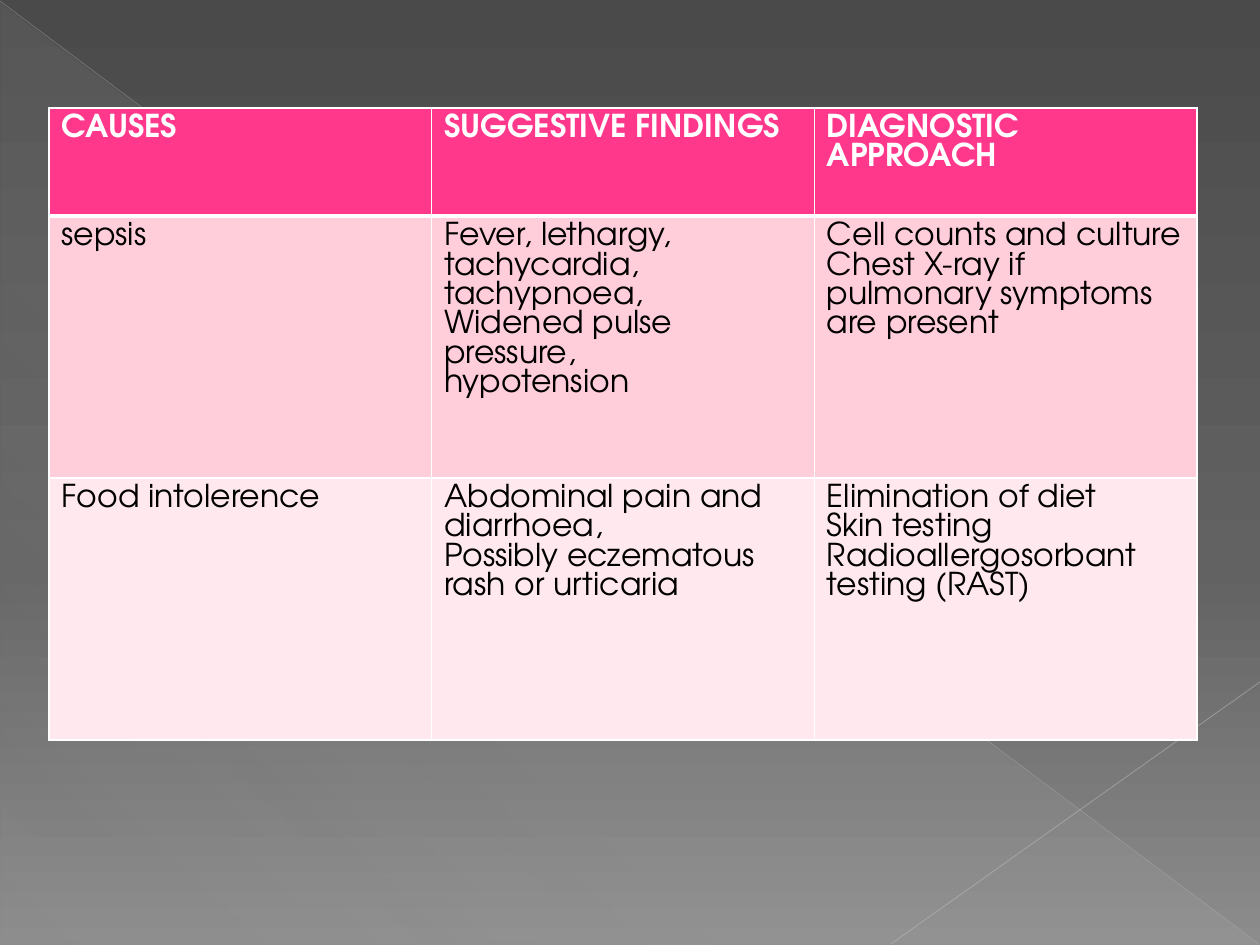
from lxml.etree import SubElement
from pptx import Presentation
from pptx.dml.color import RGBColor
from pptx.enum.shapes import MSO_CONNECTOR, MSO_SHAPE
from pptx.oxml import parse_xml
from pptx.oxml.ns import nsdecls, qn
from pptx.util import Emu, Pt

PX = 914400 / 126
FONT = "TeX Gyre Adventor"
WHITE = RGBColor(0xFF, 0xFF, 0xFF)
BLACK = RGBColor(0x00, 0x00, 0x00)
PINK = RGBColor(0xFF, 0x38, 0x8C)
ROSE = RGBColor(0xFF, 0xCE, 0xDA)
BLUSH = RGBColor(0xFF, 0xE8, 0xEE)
CHARCOAL = RGBColor(0x4A, 0x4A, 0x4A)
SLATE = RGBColor(0x62, 0x62, 0x62)
ASH = RGBColor(0x8C, 0x8C, 0x8C)
MIST = RGBColor(0xD2, 0xD2, 0xD2)
SILVER = RGBColor(0xBF, 0xBF, 0xBF)
PEARL = RGBColor(0xC6, 0xC6, 0xC6)

HEADER_FORMAT = {"name": FONT, "size": Pt(18), "bold": True}
BODY_FORMAT = {**HEADER_FORMAT, "bold": False}
ROWS = [
    (108, PINK, WHITE, HEADER_FORMAT,
     ["CAUSES", "SUGGESTIVE FINDINGS", "DIAGNOSTIC APPROACH"]),
    (262, ROSE, BLACK, BODY_FORMAT,
     ["sepsis",
      "Fever, lethargy, tachycardia, tachypnoea,\nWidened pulse pressure,\nhypotension",
      "Cell counts and culture\nChest X-ray if pulmonary symptoms are present"]),
    (262, BLUSH, BLACK, BODY_FORMAT,
     ["Food intolerence",
      "Abdominal pain and diarrhoea,\nPossibly eczematous rash or urticaria",
      "Elimination of diet\nSkin testing\nRadioallergosorbant testing (RAST)"]),
]


def px(length):
    """Turn px into EMU."""
    return Emu(round(length * PX))


def set_alpha(color_element, percent):
    """Make a colour element partly transparent."""
    SubElement(color_element, qn("a:alpha"), val=str(percent * 1000))


def apply_gradient(fill, element, angle, stops):
    """Give a fill a linear gradient of (position, colour, opacity) stops."""
    fill.gradient()
    fill.gradient_angle = 360 - angle
    stop_list = next(element.iter(qn("a:gsLst")))
    stop_list.clear()
    for position, color, opacity in stops:
        stop = SubElement(stop_list, qn("a:gs"), pos=str(position * 1000))
        set_alpha(SubElement(stop, qn("a:srgbClr"), val=str(color)), opacity)


def add_ray(slide, start, end, color, width, opacity):
    """Draw one thin translucent line."""
    ray = slide.shapes.add_connector(
        MSO_CONNECTOR.STRAIGHT, *(px(v) for v in (*start, *end)))
    ray.line.color.rgb = color
    ray.line.width = Pt(width)
    set_alpha(next(ray.element.iter(qn("a:srgbClr"))), opacity)
    SubElement(ray.element.spPr, qn("a:effectLst"))


def add_backdrop(slide, left, top, width, height):
    """Fill the background and lay the triangle and rays over the box."""
    apply_gradient(slide.background.fill, slide.element, 90,
                   [(0, CHARCOAL, 100), (60, SLATE, 100), (100, ASH, 100)])
    triangle = slide.shapes.add_shape(
        MSO_SHAPE.RIGHT_TRIANGLE,
        px(left + 1), px(top + 3), px(width - 2), px(height - 3))
    triangle.shadow.inherit = False
    triangle.line.fill.background()
    apply_gradient(triangle.fill, triangle.element, 133,
                   [(0, MIST, 10), (70, MIST, 8), (100, MIST, 1)])
    right, bottom = left + width - 1, top + height - 1
    add_ray(slide, (left, top + 1), (right, bottom), SILVER, 0.39, 35)
    add_ray(slide, (left + width, top + 682), (left + 891, bottom), PEARL, 0.47, 45)


def set_borders(cell, widths):
    """Draw white cell borders of the given widths by side."""
    properties = cell._tc.get_or_add_tcPr()
    for index, (side, width) in enumerate(widths.items()):
        properties.insert(index, parse_xml(
            f'<a:ln{side} {nsdecls("a")} w="{Pt(width)}"><a:solidFill>'
            f'<a:srgbClr val="{WHITE}"/></a:solidFill></a:ln{side}>'))


def fill_cell(cell, wording, background, color, font_format):
    """Write and format the text of one cell."""
    cell.text = wording
    cell.fill.solid()
    cell.fill.fore_color.rgb = background
    for paragraph in cell.text_frame.paragraphs:
        for run in paragraph.runs:
            run.font.color.rgb = color
            for attribute, value in font_format.items():
                setattr(run.font, attribute, value)


def add_causes_table(slide, left, top, width):
    """Place the table of causes, findings and diagnostic approach."""
    column_count = len(ROWS[0][-1])
    height = sum(row[0] for row in ROWS)
    table = slide.shapes.add_table(
        len(ROWS), column_count, px(left), px(top), px(width), px(height)).table
    for column in table.columns:
        column.width = px(width / column_count)
    for index, (row_height, background, color, font_format, wordings) in enumerate(ROWS):
        table.rows[index].height = px(row_height)
        widths = {"L": 1, "R": 1, "T": 3 if index == 1 else 1, "B": 3 if index == 0 else 1}
        for cell, wording in zip(table.rows[index].cells, wordings):
            fill_cell(cell, wording, background, color, font_format)
            set_borders(cell, widths)


def main():
    """Build and save the slide."""
    presentation = Presentation()
    presentation.slide_width, presentation.slide_height = px(1260), px(945)
    slide = presentation.slides.add_slide(presentation.slide_layouts[6])
    add_backdrop(slide, 0, 0, 1260, 945)
    add_causes_table(slide, 49, 108, 1148)
    presentation.save("out.pptx")


if __name__ == "__main__":
    main()
